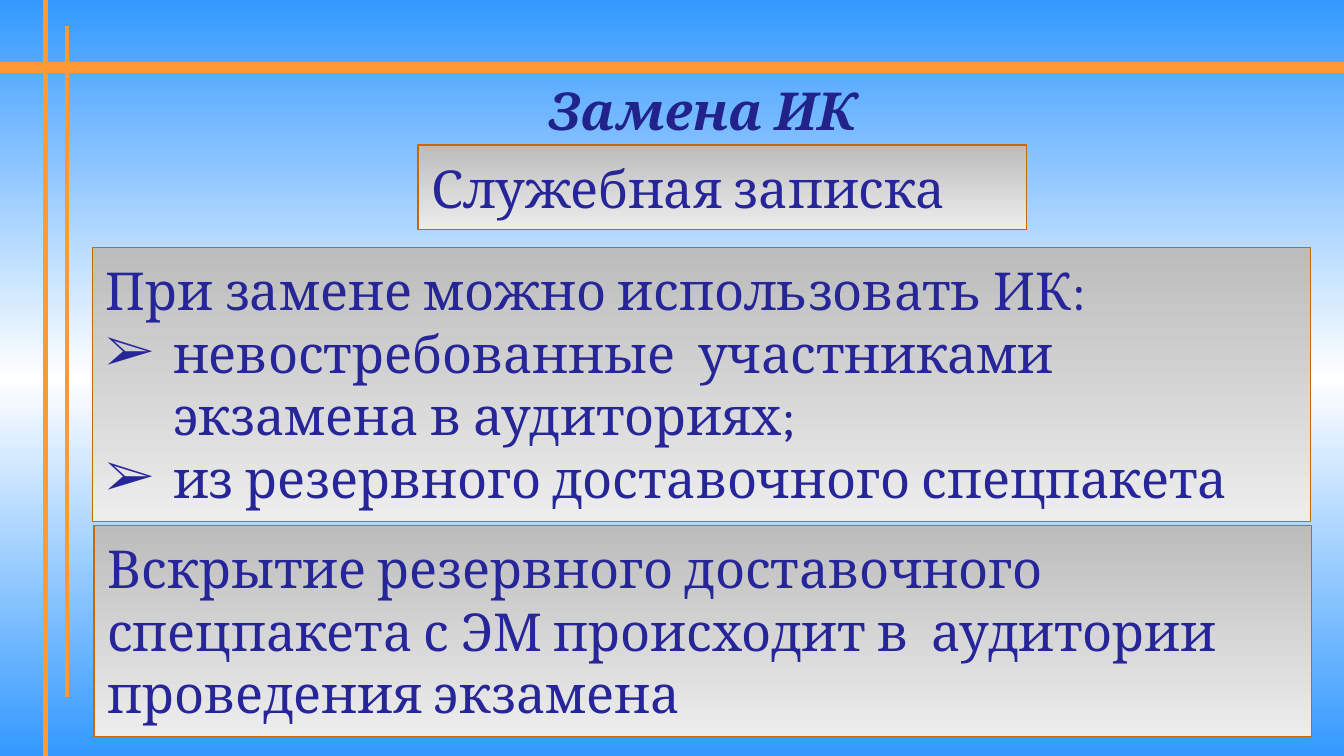
from copy import deepcopy

from lxml.etree import SubElement as Sub
from pptx import Presentation
from pptx.dml.color import RGBColor as Rgb
from pptx.enum.shapes import MSO_CONNECTOR as Conn, MSO_SHAPE as Form
from pptx.enum.text import MSO_ANCHOR as Anchor, PP_ALIGN as Align
from pptx.oxml.ns import qn
from pptx.util import Inches as Inch, Pt

# Content
TITLE = "Замена ИК"
MEMO = ["Служебная записка"]
USE = ["При замене можно использовать ИК:"]
KINDS = ["невостребованные  участниками экзамена в аудиториях;",
         "из резервного доставочного спецпакета"]
OPEN = ["Вскрытие резервного доставочного спецпакета с ЭМ "
        "происходит в  аудитории проведения экзамена"]

# Look
W = 10
H = W * 9 / 16
HUE = {"sky": "3399FF", "white": "FFFFFF", "rule": "FF9933", "edge": "CC6600",
       "pale": "EDEDED", "gray": "BCBCBC", "title": "22228B", "text": "262699"}
FONT, SIZE = "Cambria", 28
LEFT, WIDE = 0.69, 9.06

# Rules: start, end, weight
RULES = [((0, 0.5), (W, 0.5), 6),
         ((0.34, 0), (0.34, H), 3),
         ((0.5, 0.19), (0.5, 5.19), 2.25)]

# Panels: left, top, width, height, plain lines, bulleted lines
PANELS = [(LEFT, 1.84, WIDE, 2.04, USE, KINDS),
          (3.11, 1.08, WIDE / 2, 0.63, MEMO, []),
          (LEFT + 0.01, 3.91, WIDE, 1.57, OPEN, [])]


def rgb(name):
    return Rgb.from_string(HUE[name])


def shade(fill, root, names):
    """Even gradient from bottom to top."""
    fill.gradient()
    fill.gradient_angle = 90
    stops = next(root.iter(qn("a:gsLst")))
    for _ in names[2:]:
        stops.append(deepcopy(stops[-1]))
    for i, (stop, name) in enumerate(zip(fill.gradient_stops, names)):
        stop.position = i / (len(names) - 1)
        stop.color.rgb = rgb(name)


def bullet(para):
    props = para._p.get_or_add_pPr()
    props.set("marL", str(Inch(0.5)))
    props.set("indent", str(-Inch(0.5)))
    tint = Sub(props, qn("a:buClr"))
    Sub(tint, qn("a:srgbClr"), val=HUE["text"])
    Sub(props, qn("a:buFont"), typeface=FONT)
    Sub(props, qn("a:buChar"), char="➢")


def write(shape, lines, marks=(), hue="text", align=Align.LEFT, pad=0.08,
          bold=False, slant=False):
    frame = shape.text_frame
    frame.word_wrap = True
    frame.vertical_anchor = Anchor.TOP
    frame.margin_left = frame.margin_right = Inch(0.1)
    frame.margin_top = frame.margin_bottom = Inch(pad)
    for i, line in enumerate([*lines, *marks]):
        para = frame.add_paragraph() if i else frame.paragraphs[0]
        para.alignment = align
        if i >= len(lines):
            bullet(para)
        run = para.add_run()
        run.text = line
        font = run.font
        font.name, font.size = FONT, Pt(SIZE)
        font.bold, font.italic = bold, slant
        font.color.rgb = rgb(hue)


deck = Presentation()
deck.slide_width, deck.slide_height = Inch(W), Inch(H)
slide = deck.slides.add_slide(deck.slide_layouts[6])
shapes = slide.shapes

# Background and rules
shade(slide.background.fill, slide.element, ["sky", "white", "sky"])
for start, end, weight in RULES:
    rule = shapes.add_connector(Conn.STRAIGHT, *map(Inch, start + end))
    rule.line.color.rgb = rgb("rule")
    rule.line.width = Pt(weight)
    Sub(rule._element.spPr, qn("a:effectLst"))

# Title
title = shapes.add_textbox(*map(Inch, (0.61, 0.42, 9.23, 0.79)))
write(title, [TITLE], hue="title", align=Align.CENTER, pad=0.16,
      bold=True, slant=True)

# Panels
for *area, lines, marks in PANELS:
    panel = shapes.add_shape(Form.RECTANGLE, *map(Inch, area))
    panel.shadow.inherit = False
    shade(panel.fill, panel._element, ["pale", "gray"])
    panel.line.color.rgb = rgb("edge")
    panel.line.width = Pt(0.75)
    write(panel, lines, marks)

deck.save("out.pptx")
